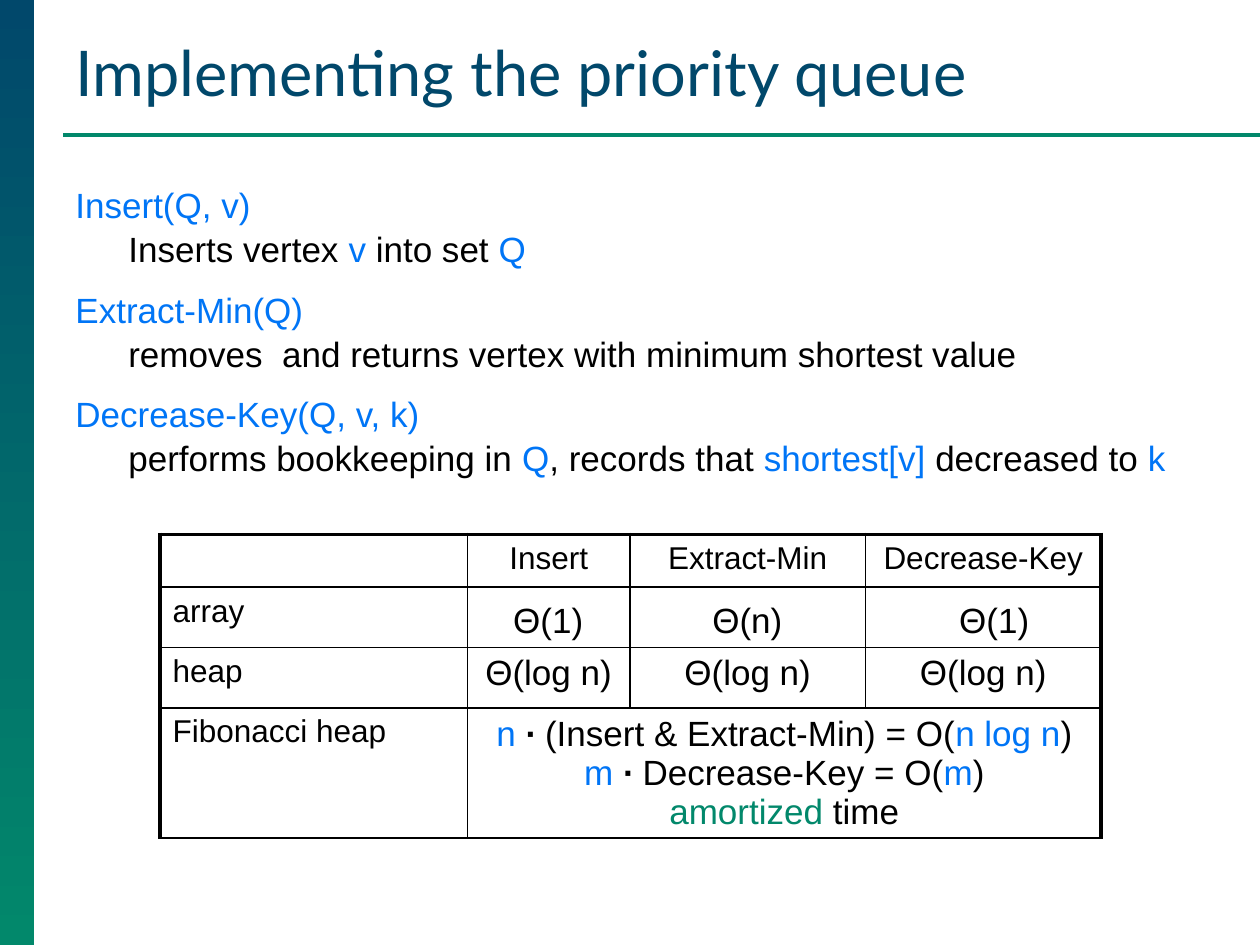
from dataclasses import dataclass
from itertools import accumulate

from lxml.etree import SubElement
from pptx import Presentation
from pptx.dml.color import RGBColor
from pptx.enum.shapes import MSO_CONNECTOR, MSO_SHAPE
from pptx.enum.text import MSO_ANCHOR, PP_ALIGN
from pptx.oxml import parse_xml
from pptx.oxml.ns import nsdecls, qn
from pptx.util import Inches, Pt


@dataclass(frozen=True)
class Theme:
    navy: str = "01486B"
    green: str = "02886B"
    blue: str = "0075F6"
    black: str = "000000"
    heading_font: str = "Lato"
    text_font: str = "Arial"
    title_size: int = 36
    text_size: int = 20
    label_size: int = 18
    thin: float = 1
    thick: float = 2.25


THEME = Theme()
BLUE, BLACK, GREEN = THEME.blue, THEME.black, THEME.green

# Content: runs are (text, colour) or (text, colour, bold)
TITLE = "Implementing the priority queue"
OPERATIONS = [
    [("Insert(Q, v)\n", BLUE), ("Inserts vertex ", BLACK), ("v", BLUE),
     (" into set ", BLACK), ("Q", BLUE)],
    [("Extract-Min(Q)\n", BLUE),
     ("removes  and returns vertex with minimum shortest value", BLACK)],
    [("Decrease-Key(Q, v, k)\n", BLUE), ("performs bookkeeping in ", BLACK),
     ("Q", BLUE), (", records that ", BLACK), ("shortest[v]", BLUE),
     (" decreased to ", BLACK), ("k", BLUE)],
]
COSTS = [
    ["", "Insert", "Extract-Min", "Decrease-Key"],
    ["array", "", "", ""],
    ["heap", "Θ(log n)", "Θ(log n)", "Θ(log n)"],
    ["Fibonacci heap", "", "", ""],
]
AMORTIZED = [
    ("n ", BLUE), ("∙", BLACK, True), (" (Insert & Extract-Min) = O(", BLACK),
    ("n log n", BLUE), (")\n", BLACK),
    ("m ", BLUE), ("∙ ", BLACK, True), ("Decrease-Key = O(", BLACK),
    ("m", BLUE), (")\n", BLACK),
    ("amortized ", GREEN), ("time", BLACK),
]
# Array costs float over their cells: text, column, shift from column centre
ARRAY_COSTS = [("Θ(1)", 1, 0), ("Θ(n)", 2, 0), ("Θ(1)", 3, 0.09)]

# Layout grid, in inches
WIDTH, HEIGHT = 10, 7.5
MARGIN = WIDTH * 0.05
TABLE_LEFT, TABLE_TOP = 1.27, 4.24
COLUMNS = [2.44, 1.29, 1.87, 1.87]
ROWS = [0.42, 0.48, 0.48, 1.03]
COST_WIDTH, COST_HEIGHT = 0.76, 0.43


def color(value):
    return RGBColor.from_string(value)


def add_runs(paragraph, runs, size, font=THEME.text_font):
    for text, tint, *bold in runs:
        run = paragraph.add_run()
        run.text = text.rstrip("\n")
        run.font.size, run.font.name = Pt(size), font
        run.font.color.rgb = color(tint)
        run.font.bold = bool(bold)
        if text.endswith("\n"):
            paragraph.add_line_break()


def place(shape, left, top, width, height):
    shape.left, shape.top = Inches(left), Inches(top)
    shape.width, shape.height = Inches(width), Inches(height)


def set_borders(cell, widths):
    properties = cell._tc.get_or_add_tcPr()
    for index, (side, width) in enumerate(zip("LRTB", widths)):
        properties.insert(index, parse_xml(
            f'<a:ln{side} {nsdecls("a")} w="{Pt(width)}"><a:solidFill>'
            f'<a:srgbClr val="{BLACK}"/></a:solidFill></a:ln{side}>'))


def add_frame(slide):
    # Side band
    band = slide.shapes.add_shape(
        MSO_SHAPE.RECTANGLE, 0, 0, Inches(0.27), Inches(HEIGHT))
    band.shadow.inherit = False
    band.line.fill.background()
    band.fill.gradient()
    band.fill.gradient_angle = 270
    for stop, tint in zip(band.fill.gradient_stops, (THEME.navy, GREEN)):
        stop.color.rgb = color(tint)

    # Rule below the title
    rule = slide.shapes.add_connector(
        MSO_CONNECTOR.STRAIGHT, Inches(MARGIN), Inches(1.07), Inches(WIDTH), Inches(1.07))
    rule.line.color.rgb = color(GREEN)
    rule.line.width = Pt(THEME.thick)
    SubElement(rule._element.spPr, qn("a:effectLst"))


def add_title(slide):
    title = slide.shapes.title
    place(title, MARGIN, 0.21, 9.28, 0.71)
    title.text_frame.vertical_anchor = MSO_ANCHOR.BOTTOM
    paragraph = title.text_frame.paragraphs[0]
    paragraph.alignment = PP_ALIGN.LEFT
    add_runs(paragraph, [(TITLE, THEME.navy)], THEME.title_size, THEME.heading_font)


def add_cost_table(slide):
    table = slide.shapes.add_table(
        len(ROWS), len(COLUMNS), Inches(TABLE_LEFT), Inches(TABLE_TOP),
        Inches(sum(COLUMNS)), Inches(sum(ROWS))).table
    table.first_row = table.horz_banding = False
    for column, width in zip(table.columns, COLUMNS):
        column.width = Inches(width)
    for row, height in zip(table.rows, ROWS):
        row.height = Inches(height)
    table.cell(3, 1).merge(table.cell(3, 3))

    for r, labels in enumerate(COSTS):
        for c, label in enumerate(labels):
            cell = table.cell(r, c)
            cell.fill.background()
            outer = (c == 0, c == 3 or (r == 3 and c > 0), r == 0, False)
            set_borders(cell, [THEME.thick if edge else THEME.thin for edge in outer])
            paragraph = cell.text_frame.paragraphs[0]
            paragraph.alignment = PP_ALIGN.CENTER if c else PP_ALIGN.LEFT
            if label:
                size = THEME.text_size if r and c else THEME.label_size
                add_runs(paragraph, [(label, BLACK)], size)
    add_runs(table.cell(3, 1).text_frame.paragraphs[0], AMORTIZED, THEME.text_size)


def add_array_costs(slide):
    edges = list(accumulate(COLUMNS, initial=TABLE_LEFT))
    for cost, column, shift in ARRAY_COSTS:
        center = (edges[column] + edges[column + 1]) / 2 + shift
        box = slide.shapes.add_textbox(
            Inches(center - COST_WIDTH / 2), Inches(TABLE_TOP + ROWS[0] + 0.04),
            Inches(COST_WIDTH), Inches(COST_HEIGHT))
        box.text_frame.word_wrap = False
        add_runs(box.text_frame.paragraphs[0], [(cost, BLACK)], THEME.text_size)


def add_operations(slide):
    box = slide.shapes.add_textbox(
        Inches(MARGIN), Inches(1.39), Inches(8.92), Inches(2.62))
    frame = box.text_frame
    frame.word_wrap = True
    for index, runs in enumerate(OPERATIONS):
        paragraph = frame.add_paragraph() if index else frame.paragraphs[0]
        properties = paragraph._p.get_or_add_pPr()
        properties.set("marL", str(Inches(0.42)))
        properties.set("indent", str(-Inches(0.42)))
        paragraph.line_spacing = 1.05
        if index:
            paragraph.space_before = Pt(9.4)
        add_runs(paragraph, runs, THEME.text_size)


def main():
    deck = Presentation()
    deck.slide_width, deck.slide_height = Inches(WIDTH), Inches(HEIGHT)
    slide = deck.slides.add_slide(deck.slide_layouts[5])
    add_frame(slide)
    add_title(slide)
    add_cost_table(slide)
    add_array_costs(slide)
    add_operations(slide)
    deck.save("out.pptx")


if __name__ == "__main__":
    main()
